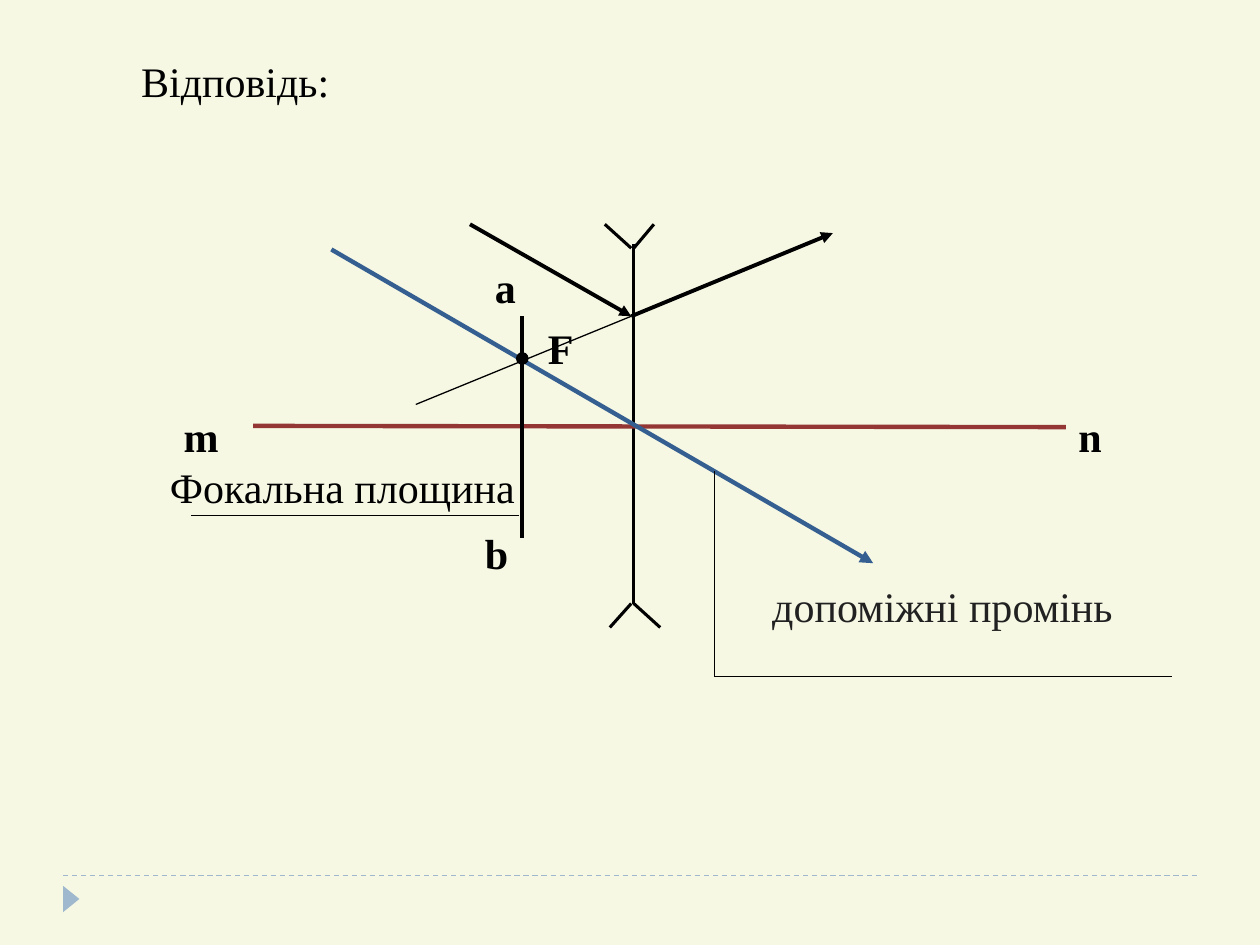
from typing import NamedTuple, Optional

import pptx
import pptx.dml.color
import pptx.enum.dml
import pptx.enum.shapes
import pptx.enum.text
import pptx.oxml.ns
import pptx.util

Inches = pptx.util.Inches
FONT = "Times New Roman"
BLACK = "000000"
AXIS_RED = "943634"
RAY_BLUE = "365F91"
FOOTER_BLUE = "9FB8CD"

# Optical geometry, in inches
LENS_X = 5.03
LENS_TOP, LENS_BOTTOM = 1.97, 4.79
HIT = (5.01, 2.51)  # where the ray meets the lens
FOCAL_X = 4.14
CALLOUT_CORNER = (5.67, 5.37)


class Line(NamedTuple):
    start: tuple
    end: tuple
    weight: float
    color: str = BLACK
    arrow: bool = False
    dash: Optional[pptx.enum.dml.MSO_LINE] = None


class Label(NamedTuple):
    text: str
    left: float
    top: float
    width: float = 0.85
    height: float = 0.7
    bold: bool = True
    color: str = BLACK


def rgb(color: str) -> pptx.dml.color.RGBColor:
    return pptx.dml.color.RGBColor.from_string(color)


def add_line(slide, line: Line) -> None:
    ends = [Inches(v) for v in (*line.start, *line.end)]
    connector = slide.shapes.add_connector(
        pptx.enum.shapes.MSO_CONNECTOR.STRAIGHT, *ends)
    connector.line.width = pptx.util.Pt(line.weight)
    connector.line.color.rgb = rgb(line.color)
    if line.dash is not None:
        connector.line.dash_style = line.dash
    properties = connector._element.spPr
    if line.arrow:
        outline = properties.find(pptx.oxml.ns.qn("a:ln"))
        outline.append(pptx.oxml.parse_xml(
            f'<a:tailEnd {pptx.oxml.ns.nsdecls("a")} type="triangle"/>'))
    properties.append(pptx.oxml.parse_xml(
        f'<a:effectLst {pptx.oxml.ns.nsdecls("a")}/>'))


def add_solid(slide, kind, left: float, top: float, width: float,
              height: float, color: str, rotation: float = 0):
    solid = slide.shapes.add_shape(
        kind, *[Inches(v) for v in (left, top, width, height)])
    solid.shadow.inherit = False
    solid.rotation = rotation
    solid.fill.solid()
    solid.fill.fore_color.rgb = rgb(color)
    solid.line.fill.background()
    return solid


def format_text(box, label: Label) -> None:
    place = {"left": label.left, "top": label.top,
             "width": label.width, "height": label.height}
    for name, value in place.items():
        setattr(box, name, Inches(value))
    frame = box.text_frame
    frame.word_wrap = True
    frame.auto_size = pptx.enum.text.MSO_AUTO_SIZE.NONE
    frame.vertical_anchor = pptx.enum.text.MSO_ANCHOR.TOP
    frame.text = label.text
    paragraph = frame.paragraphs[0]
    paragraph.alignment = pptx.enum.text.PP_ALIGN.LEFT
    font_format = {"name": FONT, "size": pptx.util.Pt(24), "bold": label.bold}
    for name, value in font_format.items():
        setattr(paragraph.runs[0].font, name, value)
    paragraph.runs[0].font.color.rgb = rgb(label.color)


def add_label(slide, label: Label) -> None:
    format_text(slide.shapes.add_textbox(0, 0, 0, 0), label)


def main() -> None:
    deck = pptx.Presentation()
    deck.slide_width, deck.slide_height = Inches(10), Inches(7.5)
    slide = deck.slides.add_slide(deck.slide_layouts[5])
    slide.background.fill.solid()
    slide.background.fill.fore_color.rgb = rgb("F6F8E4")
    shape_kinds = pptx.enum.shapes.MSO_SHAPE

    # Footer decoration
    add_line(slide, Line((0.5, 6.95), (9.5, 6.95), 0.75, FOOTER_BLUE,
                         dash=pptx.enum.dml.MSO_LINE.DASH))
    add_solid(slide, shape_kinds.ISOSCELES_TRIANGLE,
              0.46, 7.07, 0.21, 0.13, FOOTER_BLUE, rotation=90)

    # Diverging lens, optical axis and focal plane
    lens = [
        Line((LENS_X, 1.94), (LENS_X, LENS_BOTTOM), 1.75),
        Line((2.01, 3.38), (8.46, 3.39), 2.5, AXIS_RED),
        Line((5.01, LENS_TOP), (4.8, 1.78), 1.75),
        Line((LENS_X, LENS_TOP), (5.19, 1.78), 1.75),
        Line((4.84, 4.98), (5.01, LENS_BOTTOM), 1.75),
        Line((5.24, 4.98), (LENS_X, LENS_BOTTOM), 1.75),
        Line((FOCAL_X, 2.51), (FOCAL_X, 4.27), 2.25),
    ]
    # Incoming, refracted and auxiliary rays, then the backward extension
    rays = [
        Line((3.73, 1.78), HIT, 2.25, arrow=True),
        Line(HIT, (6.61, 1.85), 2.25, arrow=True),
        Line((2.63, 1.98), (6.93, 4.47), 2.5, RAY_BLUE, arrow=True),
        Line(HIT, (3.3, 3.21), 0.75),
    ]
    callouts = [
        Line((5.67, 3.74), CALLOUT_CORNER, 0.75),
        Line(CALLOUT_CORNER, (9.3, 5.37), 0.75),
        Line((4.12, 4.09), (1.52, 4.09), 0.75),
    ]
    for line in lens + rays + callouts:
        add_line(slide, line)

    # Focus point
    focus = add_solid(slide, shape_kinds.OVAL, 4.1, 2.8, 0.09, 0.09, BLACK)
    focus.line.color.rgb = rgb(BLACK)
    focus.line.width = pptx.util.Pt(0.75)

    # Labels
    for label in (
        Label("m", 1.36, 3.21),
        Label("n", 8.46, 3.21),
        Label("а", 3.83, 2.03),
        Label("b", 3.75, 4.14),
        Label("F", 4.25, 2.51),
        Label("Фокальна площина", 1.25, 3.61, 3.33, 0.66, bold=False),
        Label("допоміжні промінь", 6.03, 4.56, 3.11, 1.22, False, "212121"),
    ):
        add_label(slide, label)

    # Title
    format_text(slide.shapes.title,
                Label("Відповідь:", 1.02, 0.39, 2.5, 0.5, bold=False))

    deck.save("out.pptx")


if __name__ == "__main__":
    main()
